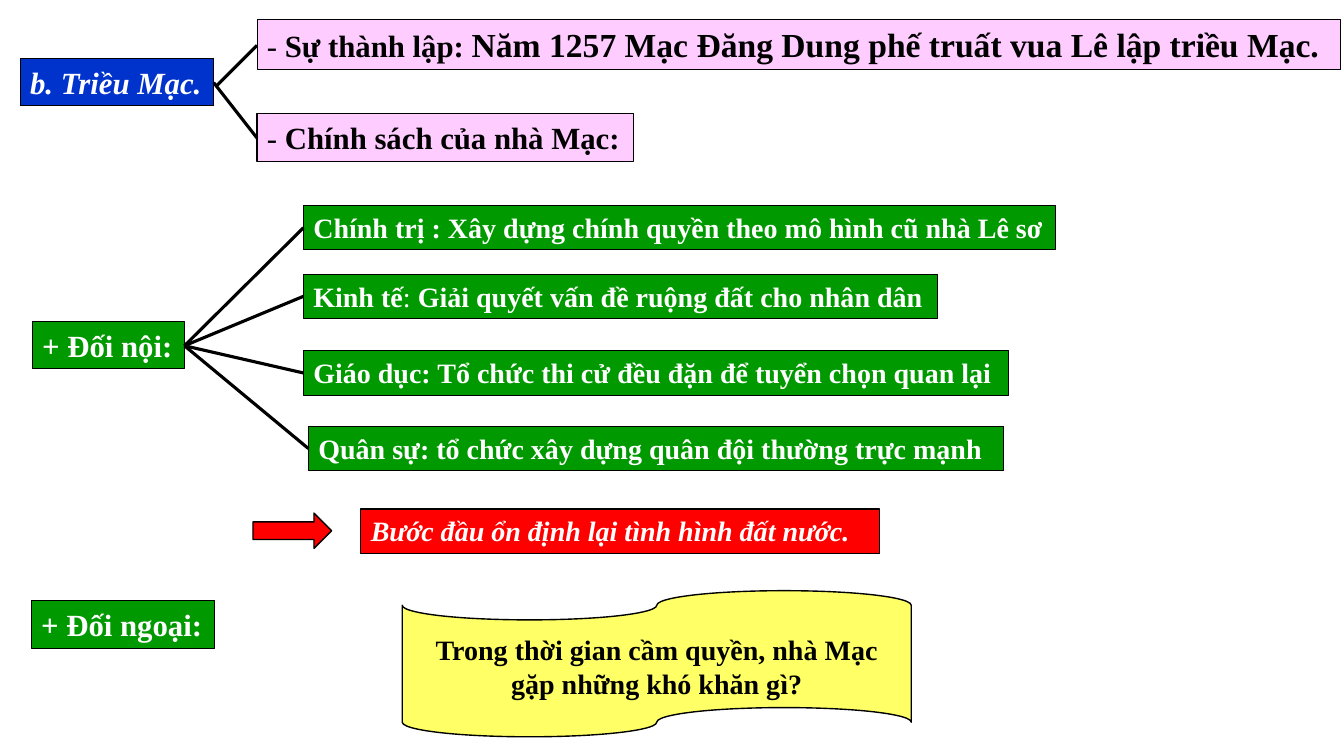
from collections import namedtuple
from lxml.etree import SubElement
from pptx import Presentation
from pptx.dml.color import RGBColor
from pptx.enum.shapes import MSO_CONNECTOR, MSO_SHAPE
from pptx.enum.text import MSO_ANCHOR, PP_ALIGN
from pptx.oxml.ns import qn
from pptx.util import Inches, Pt

# The slide is a grid of square cells, ten to the inch.
CELL = Inches(0.1)
COLS, ROWS = 133.33, 75
FONT = "Times New Roman"
TALL = {20: 4.4, 22: 4.7, 24: 5}  # label rows for each text size

BLACK = RGBColor(0, 0, 0)
WHITE = RGBColor(255, 255, 255)
BLUE = RGBColor(0x00, 0x33, 0xCC)
PINK = RGBColor(0xFF, 0xCC, 0xFF)
GREEN = RGBColor(0x00, 0x99, 0x00)
RED = RGBColor(0xFF, 0x00, 0x00)
YELLOW = RGBColor(0xFF, 0xFF, 0x66)

Box = namedtuple("Box", "x y w h")


def cells(*counts):
    return [round(count * CELL) for count in counts]


def add_form(slide, kind, box, fill, width=0.75):
    form = slide.shapes.add_shape(kind, *cells(*box))
    form.shadow.inherit = False
    form.fill.solid()
    form.fill.fore_color.rgb = fill
    form.line.color.rgb = BLACK
    form.line.width = Pt(width)
    return form


def write(form, runs, color=WHITE, align=PP_ALIGN.LEFT, italic=False,
          anchor=MSO_ANCHOR.TOP, top=0.05, right=0):
    """Fill a form with runs of (text, size, bold)."""
    frame = form.text_frame
    frame.word_wrap = True
    frame.vertical_anchor = anchor
    frame.margin_top, frame.margin_right = Inches(top), Inches(right)
    line = frame.paragraphs[0]
    line.alignment = align
    for text, size, bold in runs:
        run = line.add_run()
        run.text = text
        font = run.font
        font.name, font.size, font.bold = FONT, Pt(size), bold
        font.italic, font.color.rgb = italic, color


def add_label(slide, x, y, w, fill, runs, **style):
    tall = TALL[max(size for _, size, _ in runs)]
    form = add_form(slide, MSO_SHAPE.RECTANGLE, Box(x, y, w, tall), fill)
    write(form, runs, **style)


def add_link(slide, start, end):
    link = slide.shapes.add_connector(
        MSO_CONNECTOR.STRAIGHT, *cells(*start, *end))
    link.line.color.rgb = BLACK
    link.line.width = Pt(2.25)
    SubElement(link._element.spPr, qn("a:effectLst"))


def add_dynasty(slide, box):
    """Place the title and its two branches."""
    x, y = box.x, box.y
    left = x + 23.5
    add_label(slide, x, y + 3.9, 19.2, BLUE,
              [("b. Triều Mạc.", 22, True)], italic=True)
    add_label(slide, left, y, box.w - 23.5, PINK, [
        ("- ", 22, False), ("Sự thành lập: ", 22, True),
        ("Năm 1257 Mạc Đăng Dung phế truất vua Lê lập triều Mạc.", 24, True),
    ], color=BLACK)
    add_label(slide, left, y + box.h - 4.7, 37.4, PINK, [
        ("- ", 22, False), ("Chính sách của nhà Mạc:", 22, True),
    ], color=BLACK)
    add_link(slide, (x + 19.5, y + 6.6), (left, y + 2.6))
    add_link(slide, (x + 19.2, y + 6.3), (left, y + box.h - 2.3))


def add_home(slide, box):
    """Place the home policy and a fan of four measures."""
    x, y = box.x, box.y
    hub = (x + 15.1, y + 13.9)
    add_label(slide, x, y + 11.5, 15.1, GREEN, [("+ Đối nội:", 22, True)])
    measures = [
        (26.9, 0, 74.6, [("Chính trị : Xây dựng chính quyền theo mô hình "
                          "cũ nhà Lê sơ", 20, True)]),
        (26.9, 6.8, 62.9, [
            ("Kinh tế", 20, True), (": ", 20, False),
            ("Giải quyết vấn đề ruộng đất cho nhân dân", 20, True)]),
        (26.9, 14.4, 70, [("Giáo dục: Tổ chức thi cử đều đặn để tuyển chọn "
                           "quan lại", 20, True)]),
        (27.4, 21.9, 69, [("Quân sự: tổ chức xây dựng quân đội thường trực "
                           "mạnh", 20, True)]),
    ]
    for right, down, wide, runs in measures:
        add_label(slide, x + right, y + down, wide, GREEN, runs)
        add_link(slide, hub, (x + right, y + down + TALL[20] / 2))


def add_result(slide, box):
    """Place the arrow and the outcome it points to."""
    add_form(slide, MSO_SHAPE.RIGHT_ARROW,
             Box(box.x, box.y + 0.4, 7.8, 3.5), RED, width=1)
    add_label(slide, box.x + 10.7, box.y, box.w - 10.7, RED,
              [("Bước đầu ổn định lại tình hình đất nước.", 20, True)],
              italic=True)


def add_abroad(slide, box):
    """Place the foreign policy label and the question."""
    add_label(slide, box.x, box.y + 1, 18.2, GREEN,
              [("+ Đối ngoại:", 22, True)])
    tape = add_form(slide, MSO_SHAPE.FLOWCHART_PUNCHED_TAPE,
                    Box(box.x + 36.8, box.y, box.w - 36.8, box.h),
                    YELLOW, width=1)
    write(tape, [("Trong thời gian cầm quyền, nhà Mạc gặp những khó khăn gì?",
                  20, True)],
          color=BLACK, align=PP_ALIGN.CENTER, anchor=MSO_ANCHOR.MIDDLE,
          top=0.1, right=0.1)


def main():
    deck = Presentation()
    deck.slide_width, deck.slide_height = cells(COLS, ROWS)
    slide = deck.slides.add_slide(deck.slide_layouts[6])
    add_dynasty(slide, Box(2, 1.9, 131, 14.1))
    add_home(slide, Box(3.2, 20.4, 101.5, 26.3))
    add_result(slide, Box(25.1, 50.5, 62.2, 4.4))
    add_abroad(slide, Box(3.1, 58.6, 87.3, 14.5))
    deck.save("out.pptx")


if __name__ == "__main__":
    main()
